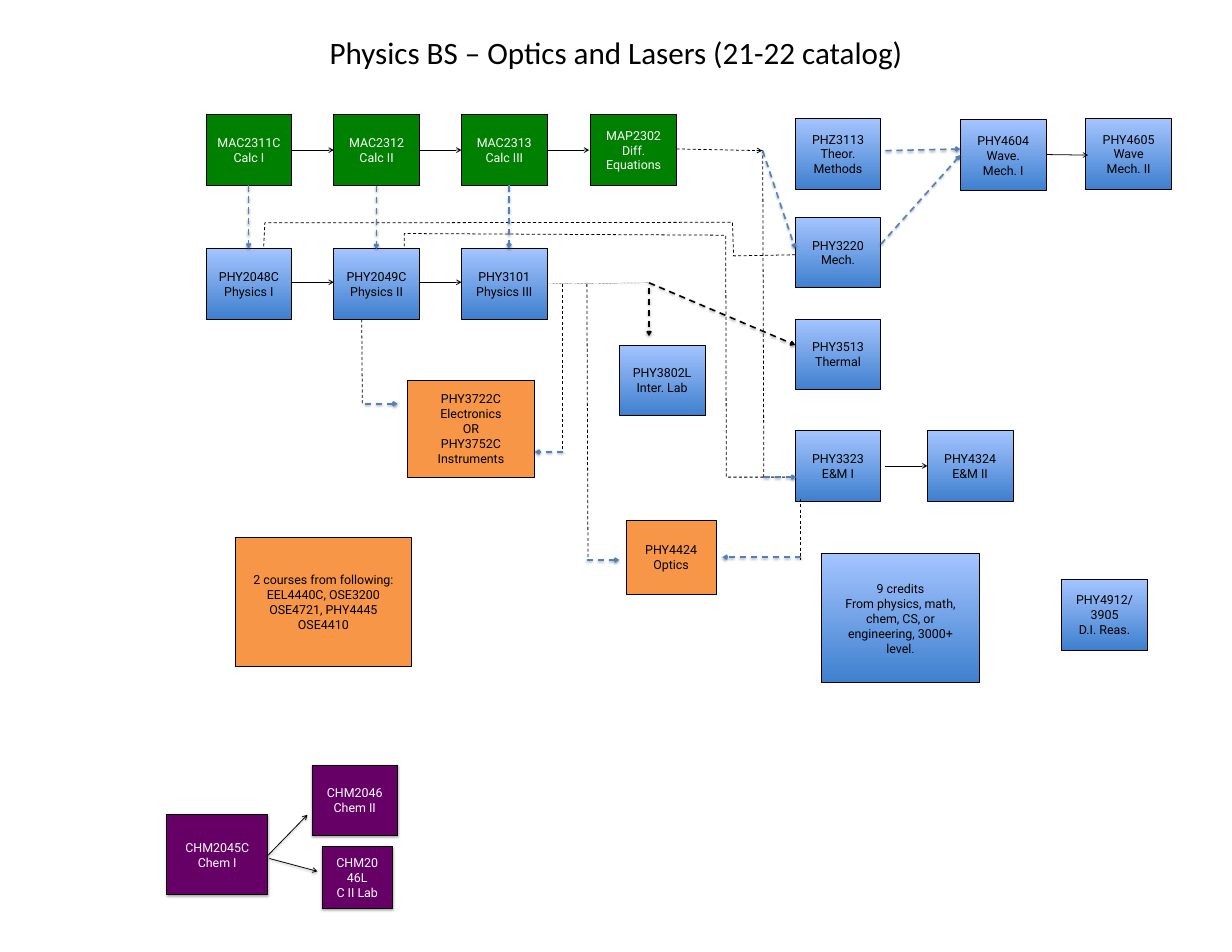
from lxml import etree
from pptx import Presentation
from pptx.dml.color import RGBColor
from pptx.enum.dml import MSO_LINE
from pptx.enum.shapes import MSO_CONNECTOR, MSO_SHAPE
from pptx.enum.text import MSO_ANCHOR, MSO_AUTO_SIZE, PP_ALIGN
from pptx.oxml.ns import qn
from pptx.util import Inches, Pt

PROCESS = MSO_SHAPE.FLOWCHART_PROCESS
STRAIGHT = MSO_CONNECTOR.STRAIGHT
DASH = MSO_LINE.DASH
MIDDLE = MSO_ANCHOR.MIDDLE
CENTER = PP_ALIGN.CENTER
NO_AUTOFIT = MSO_AUTO_SIZE.NONE

BLACK, WHITE = "000000", "FFFFFF"
GREEN, ORANGE, PURPLE, BLUE = "008000", "F79646", "660066", "4F81BD"
PHYSICS_BLUE = ("3F80CE", "A4C4FF")
COURSE_W, COURSE_H = 1.53, 1.26


def rgb(value):
    return RGBColor.from_string(value)


class CourseMap:
    def __init__(self, slide):
        self.slide = slide
        self.shapes = slide.shapes

    def start_group(self):
        self.shapes = self.slide.shapes.add_group_shape().shapes

    def set_text(self, frame, text, font, size, colour):
        frame.text = text
        frame.word_wrap = True
        frame.auto_size = NO_AUTOFIT
        frame.vertical_anchor = MIDDLE
        for paragraph in frame.paragraphs:
            paragraph.alignment = CENTER
            for run in paragraph.runs:
                run.font.name = font
                run.font.size = Pt(size)
                run.font.color.rgb = rgb(colour)

    def title(self, text, left, top, width, height):
        title = self.slide.shapes.title
        title.left, title.top = Inches(left), Inches(top)
        title.width, title.height = Inches(width), Inches(height)
        self.set_text(title.text_frame, text, "Calibri", 40, BLACK)

    def effects(self, properties, shadow, distance=20000, opacity=38000):
        effects = etree.SubElement(properties, qn("a:effectLst"))
        if shadow:
            outer = etree.SubElement(effects, qn("a:outerShdw"), blurRad="40000",
                                     dist=str(distance), dir="5400000", rotWithShape="0")
            colour = etree.SubElement(outer, qn("a:srgbClr"), val=BLACK)
            etree.SubElement(colour, qn("a:alpha"), val=str(opacity))

    def course(self, text, left, top, fill=PHYSICS_BLUE, width=COURSE_W,
               height=COURSE_H, ink=BLACK, shadow=False):
        course = self.shapes.add_shape(PROCESS, Inches(left), Inches(top),
                                       Inches(width), Inches(height))
        if fill == PHYSICS_BLUE:
            course.fill.gradient()
            course.fill.gradient_angle = 90
            for stop, colour in zip(course.fill.gradient_stops, fill):
                stop.color.rgb = rgb(colour)
        else:
            course.fill.solid()
            course.fill.fore_color.rgb = rgb(fill)
        course.line.color.rgb = rgb(BLACK)
        course.line.width = Pt(1)
        self.effects(course.element.spPr, shadow, 23000, 35000)
        frame = course.text_frame
        frame.margin_left = frame.margin_right = Inches(0.2)
        frame.margin_top = frame.margin_bottom = Inches(0.1)
        self.set_text(frame, text, "Roboto", 16, ink)

    def link(self, x1, y1, x2, y2, colour=BLACK, width=1, dashed=False,
             arrow=True, shadow=False):
        link = self.shapes.add_connector(STRAIGHT, Inches(x1), Inches(y1),
                                         Inches(x2), Inches(y2))
        link.line.color.rgb = rgb(colour)
        link.line.width = Pt(width)
        if dashed:
            link.line.dash_style = DASH
        properties = link.element.spPr
        if arrow:
            etree.SubElement(properties.find(qn("a:ln")), qn("a:tailEnd"), type="arrow")
        self.effects(properties, shadow)

    def trail(self, *ends):
        self.link(*ends, dashed=True, arrow=False)

    def corequisite(self, *ends, colour=BLUE):
        self.link(*ends, colour=colour, width=2, dashed=True, shadow=True)

    def route(self, points):
        start, *rest = [(Inches(x), Inches(y)) for x, y in points]
        builder = self.shapes.build_freeform(*start)
        builder.add_line_segments(rest, close=False)
        route = builder.convert_to_shape()
        route.fill.background()
        route.line.color.rgb = rgb(BLACK)
        route.line.width = Pt(1)
        route.line.dash_style = DASH
        route.shadow.inherit = False


def main():
    deck = Presentation()
    deck.slide_width, deck.slide_height = Inches(22), Inches(17)
    slide = deck.slides.add_slide(deck.slide_layouts[5])
    chart = CourseMap(slide)
    chart.title("Physics BS – Optics and Lasers (21-22 catalog)", 3.95, 0.55, 14.1, 0.77)

    first_year = [("MAC2311C\nCalc I", "PHY2048C\nPhysics I"),
                  ("MAC2312\nCalc II", "PHY2049C\nPhysics II"),
                  ("MAC2313\nCalc III", "PHY3101\nPhysics III")]
    for column, (maths, physics) in enumerate(first_year):
        left = 3.68 + 2.28 * column
        chart.course(maths, left, 2.05, GREEN, ink=WHITE)
        chart.course(physics, left, 4.44)
        chart.link(left + COURSE_W, 2.68, left + 2.28, 2.68)
        if column < 2:
            chart.link(left + COURSE_W, 5.04, left + 2.28, 5.04)
    chart.course("MAP2302\nDiff. Equations", 10.55, 2.05, GREEN, ink=WHITE)

    for text, top in [("PHZ3113\nTheor. Methods", 2.12), ("PHY3220\nMech.", 3.88),
                      ("PHY3513\nThermal", 5.7), ("PHY3323\nE&M I", 7.69)]:
        chart.course(text, 14.2, top)

    for text, left, top in [("PHY4605\nWave Mech. II", 19.39, 2.12),
                            ("PHY4604\nWave. Mech. I", 17.15, 2.14),
                            ("PHY4324\nE&M II", 16.56, 7.69),
                            ("PHY3802L\nInter. Lab", 11.06, 6.16),
                            ("PHY4912/3905\nD.I. Reas.", 18.96, 10.35)]:
        chart.course(text, left, top)

    chart.course("9 credits\nFrom physics, math, chem, CS, or engineering, 3000+ level.",
                 14.67, 9.89, width=2.82, height=2.3)
    for text, left, top, width, height in [
            ("PHY3722C\nElectronics\nOR\nPHY3752C\nInstruments", 7.27, 6.79, 2.28, 1.73),
            ("2 courses from following:\nEEL4440C, OSE3200\nOSE4721, PHY4445\nOSE4410",
             4.2, 9.6, 3.15, 2.3),
            ("PHY4424\nOptics", 11.18, 9.29, 1.61, 1.32)]:
        chart.course(text, left, top, ORANGE, width, height)

    chart.link(18.68, 2.76, 19.43, 2.77)
    chart.link(15.81, 8.32, 16.56, 8.32)
    chart.link(12.08, 2.66, 13.61, 2.69, dashed=True)
    chart.link(9.78, 5.07, 11.59, 5.05, width=0.25, dashed=True, arrow=False, shadow=True)

    chart.route([(4.71, 4.4), (4.73, 3.98), (13.08, 3.97), (13.1, 4.57), (14.2, 4.55)])
    chart.route([(7.22, 4.4), (7.22, 4.17), (12.96, 4.2), (12.97, 8.52), (14.22, 8.52)])

    for ends in [(13.62, 2.68, 13.64, 8.52), (6.46, 5.7, 6.47, 7.21),
                 (10.04, 5.07, 10.04, 8.07), (10.48, 5.07, 10.5, 10),
                 (14.3, 8.91, 14.3, 10)]:
        chart.trail(*ends)

    for ends in [(11.59, 5.14, 11.59, 6), (11.59, 5.05, 14.2, 6.16)]:
        chart.corequisite(*ends, colour=BLACK)
    for ends in [(4.44, 3.31, 4.44, 4.44), (6.72, 3.32, 6.72, 4.45),
                 (9.09, 3.31, 9.09, 4.44), (13.62, 2.69, 14.2, 4.44),
                 (15.73, 4.36, 17.15, 2.77), (15.81, 2.69, 17.15, 2.66),
                 (13.64, 8.52, 14.22, 8.52), (6.52, 7.21, 7.1, 7.21),
                 (10.06, 8.07, 9.55, 8.07), (10.48, 10, 11.06, 10),
                 (14.3, 9.95, 12.9, 9.95)]:
        chart.corequisite(*ends)

    chart.start_group()
    for text, left, top, width, height in [
            ("CHM2045C\nChem I", 2.98, 14.55, 1.8, 1.42),
            ("CHM2046\nChem II", 5.57, 13.66, COURSE_W, COURSE_H),
            ("CHM2046L\nC II Lab", 5.75, 15.12, 1.26, 1.1)]:
        chart.course(text, left, top, PURPLE, width, height, WHITE, shadow=True)
    chart.link(4.79, 15.27, 5.49, 14.55, shadow=True)
    chart.link(4.81, 15.33, 5.67, 15.56, shadow=True)

    deck.save("out.pptx")


if __name__ == "__main__":
    main()
